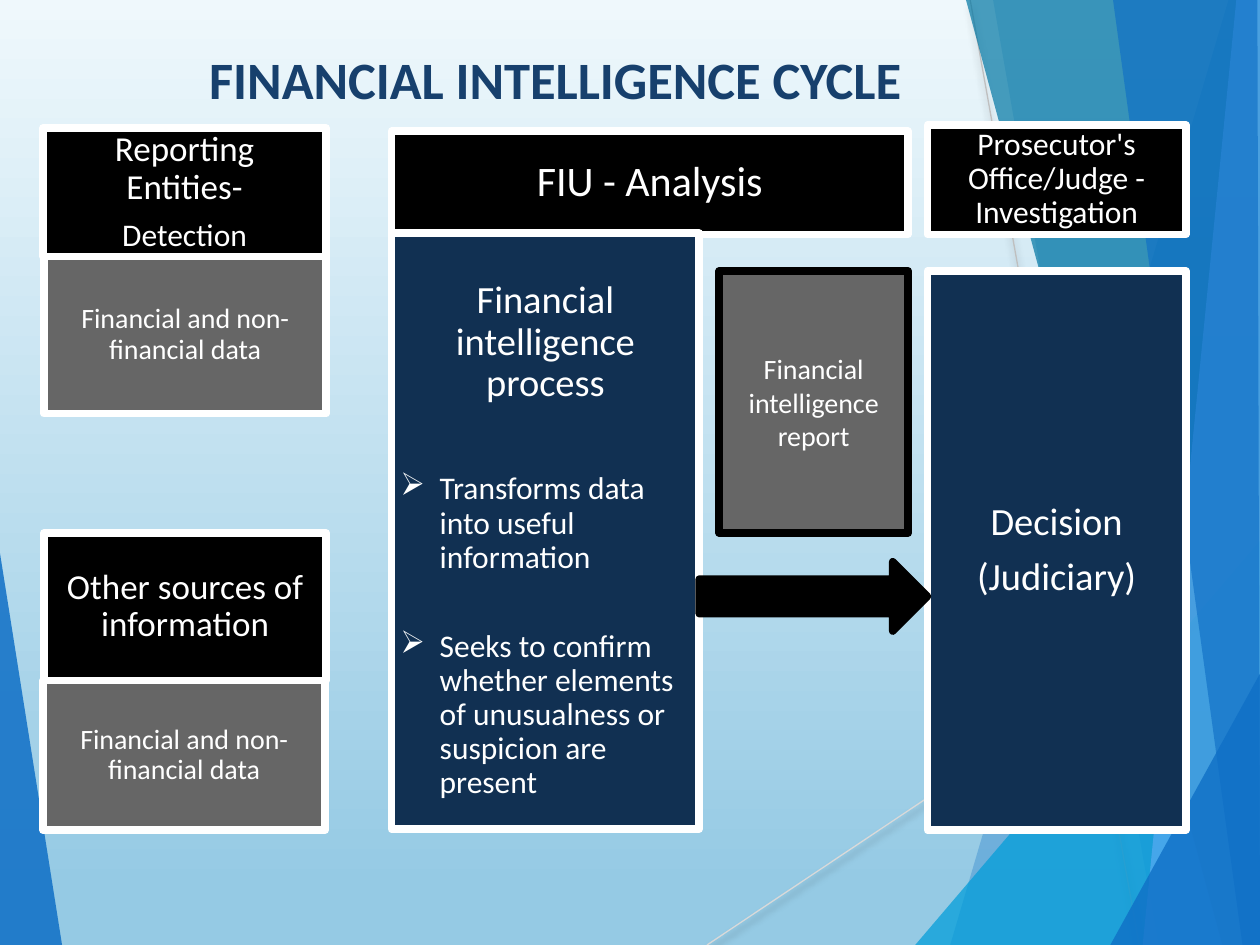
from lxml import etree
from pptx import Presentation
from pptx.dml.color import RGBColor
from pptx.enum import shapes, text
from pptx.oxml import ns
from pptx.util import Pt

FONT = "Calibri"
WHITE, BLACK, GREY, NAVY = "FFFFFF", "000000", "666666", "113052"
TITLE_BLUE = "17406D"
WIDTH, HEIGHT = 720, 540
BORDER = 4.33

# corner points, colour, opacity in percent
FACETS_BEHIND_LINES = [
    ([(0, 316), (35.5, 540), (0, 540)], "0F6FC6", 85),
]
FACETS = [
    ([(702, 0), (543, 540), (720, 540), (720, 0)], "0F6FC6", 30),
    ([(567.5, 0), (662, 540), (720, 540), (720, 0)], "0F6FC6", 20),
    ([(523, 540), (720, 309), (720, 540)], "009DD9", 72),
    ([(552, 0), (698.5, 540), (720, 540), (720, 0)], "0076A3", 70),
    ([(706.5, 0), (653, 540), (720, 540), (720, 0)], "59AAF2", 70),
    ([(636, 0), (710, 540), (720, 540), (718.5, 0)], "0F6FC6", 65),
    ([(634.5, 540), (720, 385), (720, 540)], "0F6FC6", 80),
]
DATA_TEXT = [("Financial and non-financial data", 16)]

# left, top, width, height, fill, inset, paragraphs as (text, size)
BOXES = [
    (25.2, 146.4, 161.2, 90, GREY, 10, DATA_TEXT),
    (24.6, 73.2, 161.8, 73.4, BLACK, 10,
     [("Reporting Entities-", 20), ("Detection", 18)]),
    (223.8, 75, 295, 59, BLACK, 10, [("FIU - Analysis", 24)]),
    (530, 71.4, 147.6, 62.6, BLACK, 5,
     [("Prosecutor's Office/Judge - Investigation", 18)]),
    (530, 154.8, 147.6, 319.6, NAVY, 10,
     [("Decision", 22), ("(Judiciary)", 22)]),
    (25.2, 304.6, 161.2, 84.2, BLACK, 10,
     [("Other sources of information", 20)]),
    (24.6, 388.8, 161.2, 85.6, GREY, 10, DATA_TEXT),
]


def colour(value):
    return RGBColor.from_string(value)


def child(parent, tag, **attributes):
    return etree.SubElement(parent, ns.qn(tag), attributes)


def set_background(page):
    fill = page.background.fill
    fill.gradient()
    fill.gradient_angle = 270
    for stop, position, value in zip(
            fill.gradient_stops, (0, 0.94), ("EFF8FC", "95CAE4")):
        stop.position = position
        stop.color.rgb = colour(value)


def add_facet(page, points, value, opacity):
    """Add a translucent polygon without an outline."""
    corners = [(Pt(x), Pt(y)) for x, y in points]
    builder = page.shapes.build_freeform(*corners[0])
    builder.add_line_segments(corners[1:], close=True)
    facet = builder.convert_to_shape()
    facet.shadow.inherit = False
    facet.line.fill.background()
    facet.fill.solid()
    facet.fill.fore_color.rgb = colour(value)
    rgb = facet.fill._xPr.find(".//" + ns.qn("a:srgbClr"))
    child(rgb, "a:alpha", val=str(opacity * 1000))


def add_shaded_line(page, start, end, value):
    """Add a thin straight line with a soft shadow below it."""
    line = page.shapes.add_connector(
        shapes.MSO_CONNECTOR.STRAIGHT, *map(Pt, start + end))
    line.line.width = Pt(0.75)
    line.line.color.rgb = colour(value)
    effects = child(line._element.spPr, "a:effectLst")
    shadow = child(effects, "a:outerShdw", blurRad=str(Pt(4)),
                   dist=str(Pt(3)), dir="5400000", rotWithShape="0")
    rgb = child(shadow, "a:srgbClr", val=BLACK)
    child(rgb, "a:alpha", val="35000")


def add_block(page, kind, place, fill, border):
    block = page.shapes.add_shape(kind, *map(Pt, place))
    block.shadow.inherit = False
    block.fill.solid()
    block.fill.fore_color.rgb = colour(fill)
    block.line.color.rgb = colour(border)
    block.line.width = Pt(BORDER)
    return block


def set_frame(box, anchor, sides, ends):
    frame = box.text_frame
    frame.word_wrap = True
    frame.vertical_anchor = anchor
    frame.margin_left = frame.margin_right = Pt(sides)
    frame.margin_top = frame.margin_bottom = Pt(ends)
    return frame


def write(para, words, size, value=WHITE, bold=False, spacing=0.9, after=None):
    para.alignment = text.PP_ALIGN.CENTER
    para.line_spacing = spacing
    para.space_after = Pt(0.35 * size if after is None else after)
    span = para.add_run()
    span.text = words
    span.font.name = FONT
    span.font.size = Pt(size)
    span.font.bold = bold
    span.font.color.rgb = colour(value)


def make_bullet(para):
    para.alignment = text.PP_ALIGN.LEFT
    properties = para._p.get_or_add_pPr()
    properties.set("marL", str(Pt(22.5)))
    properties.set("indent", str(Pt(-22.5)))
    child(properties, "a:buChar", char="➢")


def add_title(page):
    box = page.shapes.add_textbox(Pt(0), Pt(9.4), Pt(635), Pt(56.9))
    frame = set_frame(box, text.MSO_ANCHOR.BOTTOM, 7.2, 3.6)
    write(frame.paragraphs[0], "FINANCIAL INTELLIGENCE CYCLE", 30,
          TITLE_BLUE, bold=True, spacing=1.0, after=0)


def add_box(page, left, top, width, height, fill, inset, lines):
    box = add_block(page, shapes.MSO_SHAPE.RECTANGLE,
                    (left, top, width, height), fill, WHITE)
    frame = set_frame(box, text.MSO_ANCHOR.MIDDLE, inset, inset)
    for number, (words, size) in enumerate(lines):
        para = frame.add_paragraph() if number else frame.paragraphs[0]
        write(para, words, size)


def add_process_box(page):
    box = add_block(page, shapes.MSO_SHAPE.RECTANGLE,
                    (223.8, 133.2, 175.8, 340.6), NAVY, WHITE)
    frame = set_frame(box, text.MSO_ANCHOR.TOP, 5, 5)
    frame.margin_top = Pt(27)
    write(frame.paragraphs[0], "Financial intelligence process", 22, after=38.7)
    for words, after in (
            ("Transforms data into useful information", 31.8),
            ("Seeks to confirm whether elements of unusualness "
             "or suspicion are present", 0)):
        para = frame.add_paragraph()
        write(para, words, 18, after=after)
        make_bullet(para)


def add_report(page):
    box = add_block(page, shapes.MSO_SHAPE.RECTANGLE,
                    (411, 154.8, 108, 149.8), GREY, BLACK)
    frame = set_frame(box, text.MSO_ANCHOR.MIDDLE, 7.2, 3.6)
    write(frame.paragraphs[0], "Financial intelligence report", 16,
          spacing=1.0, after=0)


def main():
    deck = Presentation()
    deck.slide_width, deck.slide_height = Pt(WIDTH), Pt(HEIGHT)
    page = deck.slides.add_slide(deck.slide_layouts[6])
    set_background(page)
    for facet in FACETS_BEHIND_LINES:
        add_facet(page, *facet)
    add_shaded_line(page, (404, HEIGHT), (WIDTH, 329), "D9D9D9")
    add_shaded_line(page, (554.4, 0), (651, HEIGHT), "BFBFBF")
    for facet in FACETS:
        add_facet(page, *facet)
    add_title(page)
    for box in BOXES:
        add_box(page, *box)
    add_process_box(page)
    add_block(page, shapes.MSO_SHAPE.RIGHT_ARROW,
              (399.6, 321, 130.4, 39.6), BLACK, BLACK)
    add_report(page)
    deck.save("out.pptx")


if __name__ == "__main__":
    main()
